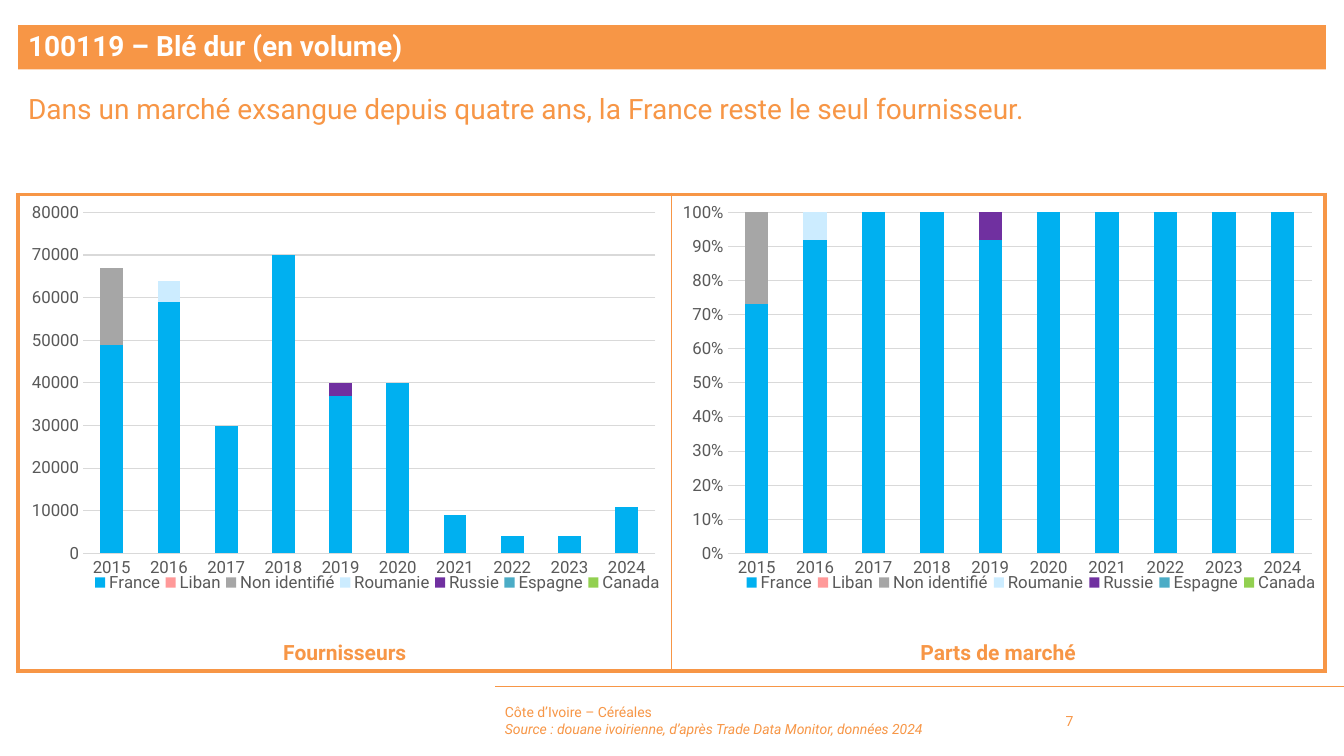
from lxml import etree
from pptx import Presentation
from pptx.chart.data import CategoryChartData
from pptx.dml.color import RGBColor
from pptx.enum.chart import XL_CHART_TYPE, XL_LEGEND_POSITION, XL_TICK_MARK
from pptx.enum.shapes import MSO_CONNECTOR, MSO_SHAPE
from pptx.enum.text import MSO_ANCHOR, PP_ALIGN
from pptx.oxml import parse_xml
from pptx.oxml.ns import nsdecls, qn
from pptx.util import Inches, Pt

ORANGE, WHITE, GREY, PALE_GREY = "F79646", "FFFFFF", "595959", "D9D9D9"
FONT = "Roboto"
TITLE = "100119 – Blé dur (en volume)"
MESSAGE = "Dans un marché exsangue depuis quatre ans, la France reste le seul fournisseur."
COUNTRY = "Côte d’Ivoire – Céréales"
SOURCE = "Source : douane ivoirienne, d’après Trade Data Monitor, données 2024"
PAGE = "7"

YEARS = [str(year) for year in range(2015, 2025)]
SUPPLIERS = {
    "France": "00B0F0", "Liban": "FF9999", "Non identifié": "A6A6A6", "Roumanie": "CCECFF",
    "Russie": "7030A0", "Espagne": "4BACC6", "Canada": "92D050",
}
# Suppliers missing from a panel have zero in every year.
# Frames are (x, y, width, height) as shares of the chart.
PANELS = [
    dict(
        caption="Fournisseurs", left=0.18, width=6.45, top_value=80000, step=10000,
        number_format="General",
        plot=(0.1, 0.042, 0.88, 0.8), legend=(0.11, 0.885, 0.885, 0.05),
        values={
            "France": [49000, 59000, 30000, 70000, 37000, 40000, 9000, 4000, 4000, 11000],
            "Non identifié": [18000] + [0] * 9,
            "Roumanie": [0, 5000] + [0] * 8,
            "Russie": [0] * 4 + [3000] + [0] * 5,
        },
    ),
    dict(
        caption="Parts de marché", left=6.63, width=6.51, top_value=1, step=0.1,
        number_format="0%",
        plot=(0.09, 0.042, 0.89, 0.8), legend=(0.11, 0.885, 0.885, 0.05),
        values={
            "France": [0.73, 0.92, 1, 1, 0.92, 1, 1, 1, 1, 1],
            "Non identifié": [0.27] + [0] * 9,
            "Roumanie": [0, 0.08] + [0] * 8,
            "Russie": [0] * 4 + [0.08] + [0] * 5,
        },
    ),
]

SLIDE_WIDTH, SLIDE_HEIGHT = 13.33, 7.5
MARGIN, COLUMN = 0.18, 6.48
PANEL_TOP, PANEL_HEIGHT, CHART_HEIGHT = 1.93, 4.73, 4.23
CAPTION_TOP, CAPTION_HEIGHT = 6.3, 0.35
FOOTER_LEFT, FOOTER_TOP, FOOTER_HEIGHT = 4.91, 6.95, 0.4


def color(value):
    return RGBColor.from_string(value)


def box(left, top, width, height):
    return [Inches(length) for length in (left, top, width, height)]


def set_font(font, size, hex_color, bold=False, italic=False):
    font.name, font.size = FONT, Pt(size)
    font.bold, font.italic = bold, italic
    font.color.rgb = color(hex_color)


def write(shape, *lines, size=10, hex_color=ORANGE, bold=False, italic_lines=(),
          align=PP_ALIGN.LEFT, anchor=MSO_ANCHOR.TOP, spacing=None):
    frame = shape.text_frame
    frame.word_wrap = True
    frame.vertical_anchor = anchor
    for index, line in enumerate(lines):
        paragraph = frame.add_paragraph() if index else frame.paragraphs[0]
        paragraph.alignment, paragraph.line_spacing = align, spacing
        run = paragraph.add_run()
        run.text = line
        set_font(run.font, size, hex_color, bold, index in italic_lines)


def set_border(cell, side, points):
    border = parse_xml(
        f'<a:{side} {nsdecls("a")} w="{Pt(points)}"><a:solidFill>'
        f'<a:srgbClr val="{ORANGE}"/></a:solidFill></a:{side}>')
    cell._tc.get_or_add_tcPr().append(border)


def add_frame(slide):
    """Two-cell table: thick outer border, thin divider."""
    place = box(MARGIN, PANEL_TOP, 2 * COLUMN, PANEL_HEIGHT)
    table = slide.shapes.add_table(1, 2, *place).table
    table.first_row = table.horz_banding = False
    for cell, left, right in zip(table.rows[0].cells, (3, 1), (1, 3)):
        for side, points in (("lnL", left), ("lnR", right), ("lnT", 3), ("lnB", 3)):
            set_border(cell, side, points)
        cell.fill.background()


def place_part(element, frame, inner=False):
    """Fix a chart part at a share of the chart area."""
    for old in element.findall(qn("c:layout")):
        element.remove(old)
    target = '<c:layoutTarget val="inner"/>' if inner else ""
    modes = '<c:xMode val="edge"/><c:yMode val="edge"/>'
    sizes = "".join(f'<c:{key} val="{share}"/>' for key, share in zip("xywh", frame))
    layout = parse_xml(
        f'<c:layout {nsdecls("c")}><c:manualLayout>{target}{modes}{sizes}'
        '</c:manualLayout></c:layout>')
    position = element.find(qn("c:legendPos"))
    if position is None:
        element.insert(0, layout)
    else:
        position.addnext(layout)


def add_panel_chart(slide, panel):
    data = CategoryChartData(number_format=panel["number_format"])
    data.categories = YEARS
    for supplier in SUPPLIERS:
        data.add_series(supplier, panel["values"].get(supplier, [0] * len(YEARS)))
    place = box(panel["left"], PANEL_TOP, panel["width"], CHART_HEIGHT)
    chart = slide.shapes.add_chart(XL_CHART_TYPE.COLUMN_STACKED, *place, data).chart
    chart.has_title = False
    set_font(chart.font, 12, GREY)

    plot = chart.plots[0]
    plot.gap_width, plot.overlap, plot.vary_by_categories = 150, 100, False
    for series, hex_color in zip(plot.series, SUPPLIERS.values()):
        series.format.fill.solid()
        series.format.fill.fore_color.rgb = color(hex_color)

    values, years = chart.value_axis, chart.category_axis
    for axis in (values, years):
        axis.major_tick_mark = axis.minor_tick_mark = XL_TICK_MARK.NONE
        set_font(axis.tick_labels.font, 12, GREY)
    values.minimum_scale, values.maximum_scale = 0, panel["top_value"]
    values.major_unit = panel["step"]
    values.tick_labels.number_format = panel["number_format"]
    values.tick_labels.number_format_is_linked = False
    values.format.line.fill.background()
    for line in (values.major_gridlines.format.line, years.format.line):
        line.color.rgb, line.width = color(PALE_GREY), Pt(0.75)

    chart.has_legend = True
    chart.legend.position = XL_LEGEND_POSITION.BOTTOM
    chart.legend.include_in_layout = False
    set_font(chart.legend.font, 12, GREY)
    place_part(chart.legend._element, panel["legend"])
    place_part(chart._chartSpace.chart.plotArea, panel["plot"], inner=True)


def main():
    presentation = Presentation()
    presentation.slide_width = Inches(SLIDE_WIDTH)
    presentation.slide_height = Inches(SLIDE_HEIGHT)
    slide = presentation.slides.add_slide(presentation.slide_layouts[6])
    shapes = slide.shapes

    rule = shapes.add_connector(MSO_CONNECTOR.STRAIGHT, Inches(SLIDE_WIDTH), Inches(6.81),
                                Inches(FOOTER_LEFT), Inches(6.81))
    rule.line.color.rgb, rule.line.width = color(ORANGE), Pt(0.5)
    etree.SubElement(rule._element.spPr, qn("a:effectLst"))

    add_frame(slide)
    for index, panel in enumerate(PANELS):
        place = box(MARGIN + index * COLUMN, CAPTION_TOP, COLUMN, CAPTION_HEIGHT)
        write(shapes.add_textbox(*place), panel["caption"], size=15, bold=True,
              align=PP_ALIGN.CENTER)

    footer = shapes.add_textbox(*box(FOOTER_LEFT, FOOTER_TOP, 5.43, FOOTER_HEIGHT))
    write(footer, COUNTRY, SOURCE, italic_lines=(1,), anchor=MSO_ANCHOR.MIDDLE)
    page = shapes.add_textbox(*box(10.47, FOOTER_TOP, 0.99, FOOTER_HEIGHT))
    write(page, PAGE, anchor=MSO_ANCHOR.MIDDLE)

    banner = shapes.add_shape(MSO_SHAPE.RECTANGLE, *box(MARGIN, 0.25, 12.97, 0.44))
    banner.shadow.inherit = False
    banner.fill.solid()
    banner.fill.fore_color.rgb = color(ORANGE)
    banner.line.fill.background()
    write(banner, TITLE, size=20, hex_color=WHITE, bold=True, anchor=MSO_ANCHOR.MIDDLE,
          spacing=0.9)
    message = shapes.add_textbox(*box(MARGIN, 0.9, 2 * COLUMN, 0.81))
    write(message, MESSAGE, size=20, spacing=0.9)

    for panel in PANELS:
        add_panel_chart(slide, panel)
    presentation.save("out.pptx")


if __name__ == "__main__":
    main()
